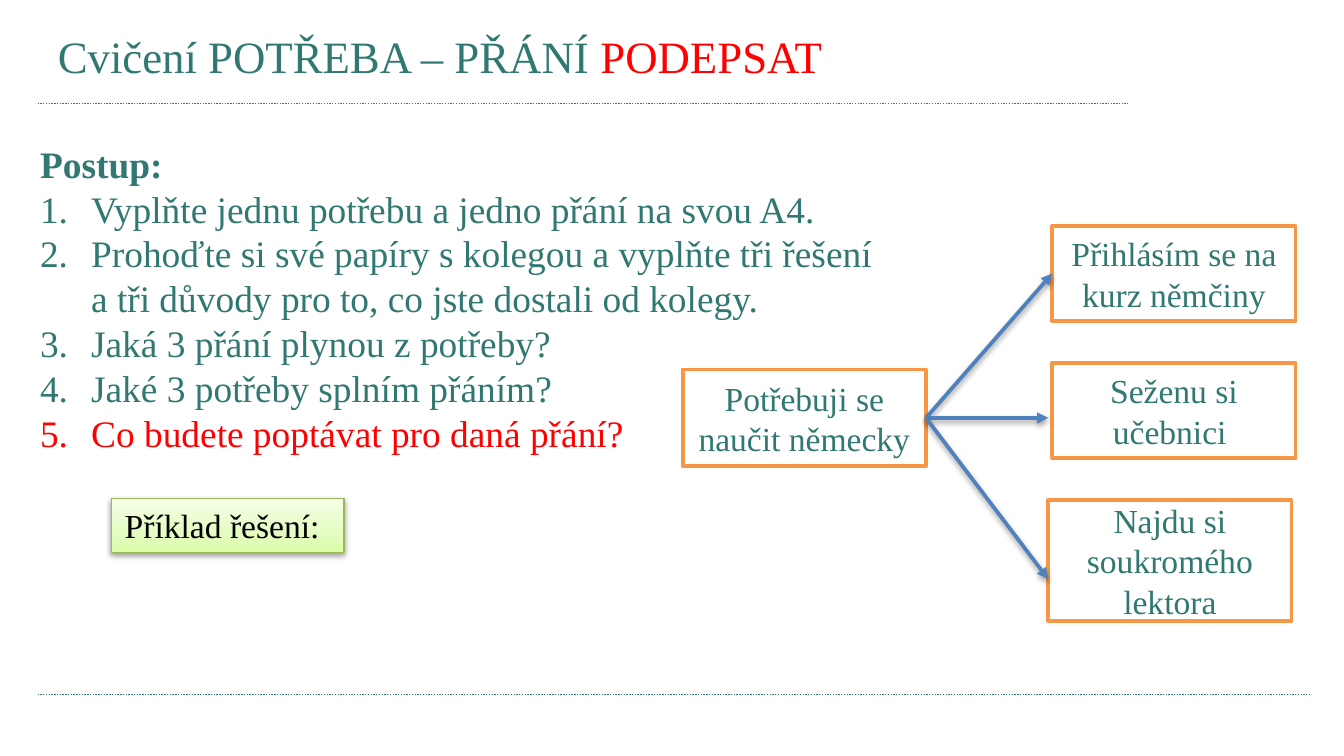
from lxml import etree
from pptx import Presentation
from pptx.dml.color import RGBColor
from pptx.enum.dml import MSO_LINE
from pptx.enum.shapes import MSO_CONNECTOR, MSO_SHAPE
from pptx.enum.text import MSO_ANCHOR, PP_ALIGN
from pptx.oxml import parse_xml
from pptx.oxml.ns import nsdecls, qn
from pptx.util import Inches, Pt

LINE, RECT, DOT = MSO_CONNECTOR.STRAIGHT, MSO_SHAPE.RECTANGLE, MSO_LINE.ROUND_DOT
TOP, MID = MSO_ANCHOR.TOP, MSO_ANCHOR.MIDDLE
LEFT, CENTER = PP_ALIGN.LEFT, PP_ALIGN.CENTER

TEAL = RGBColor(0x30, 0x78, 0x71)
RED = RGBColor(0xFF, 0, 0)
BLACK = RGBColor(0, 0, 0)
WHITE = RGBColor(0xFF, 0xFF, 0xFF)
ORANGE = RGBColor(0xF7, 0x96, 0x46)
BLUE = RGBColor(0x4F, 0x81, 0xBD)
GREEN = RGBColor(0x98, 0xB9, 0x55)
FONT = "Times New Roman"

# Content
TITLE = [("Cvičení POTŘEBA – PŘÁNÍ ", TEAL), ("PODEPSAT", RED)]
HEAD = "Postup:"
STEPS = [
    ("Vyplňte jednu potřebu a jedno přání na svou A4.", TEAL),
    ("Prohoďte si své papíry s kolegou a vyplňte tři řešení "
     "a tři důvody pro to, co jste dostali od kolegy.", TEAL),
    ("Jaká 3 přání plynou z potřeby?", TEAL),
    ("Jaké 3 potřeby splním přáním?", TEAL),
    ("Co budete poptávat pro daná přání?", RED),
]
LABEL = "Příklad řešení:"
NEED = "Potřebuji se naučit německy"
# Wish: text, left, height, arrow end (None joins the box)
WISHES = [
    ("Přihlásím se na kurz němčiny", 7.83, 0.71, None),
    ("Seženu si učebnici ", 7.83, 0.71, (7.8, 3.11)),
    ("Najdu si soukromého lektora", 7.8, 0.9, (7.8, 4.31)),
]
RULES = [(0.77, 8.39), (5.17, 9.75)]  # height, right end
BOX_W, ROW, STEP = 1.81, 1.68, 1.02
STOPS = [(0, "DAFDA7"), (35, "E4FCC2"), (100, "F5FFE7")]

# A 16:9 slide
deck = Presentation()
deck.slide_width = Inches(10)
deck.slide_height = deck.slide_width * 9 // 16
slide = deck.slides.add_slide(deck.slide_layouts[5])
shapes = slide.shapes


def write(para, text, size, color, bold=False):
    run = para.add_run()
    run.text = text
    look = {"name": FONT, "size": Pt(size), "bold": bold}
    for key, val in look.items():
        setattr(run.font, key, val)
    run.font.color.rgb = color


def effect(item, shade):
    """Set the shadow of a shape or line, or none at all."""
    props = item._element.spPr
    for old in props.findall(qn("a:effectLst")):
        props.remove(old)
    inner = ('<a:outerShdw blurRad="40000" dist="20000" dir="5400000" '
             'rotWithShape="0"><a:srgbClr val="000000"><a:alpha val="38000"/>'
             '</a:srgbClr></a:outerShdw>') if shade else ""
    props.append(parse_xml(
        f'<a:effectLst {nsdecls("a")}>{inner}</a:effectLst>'))


def connect(start, end, color, width, shade=False):
    line = shapes.add_connector(LINE, *map(Inches, start + end))
    line.line.color.rgb = color
    line.line.width = Pt(width)
    effect(line, shade)
    return line


def add_box(text, at, edge, width, ink, align, anchor):
    box = shapes.add_shape(RECT, *map(Inches, at))
    box.shadow.inherit = False
    box.fill.solid()
    box.fill.fore_color.rgb = WHITE
    box.line.color.rgb = edge
    box.line.width = Pt(width)
    frame = box.text_frame
    frame.word_wrap = True
    frame.vertical_anchor = anchor
    frame.paragraphs[0].alignment = align
    write(frame.paragraphs[0], text, 18, ink)
    return box


# Dotted rules
for y, right in RULES:
    connect((0.28, y), (right, y), TEAL, 0.75).line.dash_style = DOT

# Title
title = shapes.title
place = {"left": 0.33, "top": 0.16, "width": 7.04, "height": 0.56}
for key, val in place.items():
    setattr(title, key, Inches(val))
title.text_frame.vertical_anchor = TOP
para = title.text_frame.paragraphs[0]
para.alignment = LEFT
for text, color in TITLE:
    write(para, text, 24, color)

# Numbered steps
frame = shapes.add_textbox(*map(Inches, (0.2, 1, 6.46, 2.46))).text_frame
frame.word_wrap = True
write(frame.paragraphs[0], HEAD, 20, TEAL, True)
for text, color in STEPS:
    para = frame.add_paragraph()
    props = para._p.get_or_add_pPr()
    props.set("marL", str(Inches(0.38)))
    props.set("indent", str(-Inches(0.38)))
    etree.SubElement(props, qn("a:buFont"), typeface="+mj-lt")
    etree.SubElement(props, qn("a:buAutoNum"), type="arabicPeriod")
    write(para, text, 20, color)

# Example label with a gradient, darker at the bottom
label = add_box(LABEL, (0.83, 3.71, 1.73, 0.4), GREEN, 0.75, BLACK, LEFT, TOP)
stops = "".join(f'<a:gs pos="{pos * 1000}"><a:srgbClr val="{color}"/></a:gs>'
                for pos, color in STOPS)
solid = label._element.spPr.find(qn("a:solidFill"))
solid.getparent().replace(solid, parse_xml(
    f'<a:gradFill {nsdecls("a")} rotWithShape="1"><a:gsLst>{stops}</a:gsLst>'
    '<a:lin ang="16200000" scaled="0"/></a:gradFill>'))
effect(label, True)

# Need and wishes, then arrows over them
need = add_box(NEED, (5.08, 2.75, BOX_W, 0.72), ORANGE, 2, TEAL, CENTER, MID)
goals = []
for i, (text, left, high, end) in enumerate(WISHES):
    at = (left, ROW + i * STEP, BOX_W, high)
    goals.append((add_box(text, at, ORANGE, 2, TEAL, CENTER, MID), end))

for box, end in goals:
    arrow = connect((6.89, 3.11), end or (7.83, 2.04), BLUE, 2, True)
    etree.SubElement(arrow.line._get_or_add_ln(), qn("a:tailEnd"),
                     type="triangle")
    arrow.begin_connect(need, 3)
    if end is None:
        arrow.end_connect(box, 1)

deck.save("out.pptx")
